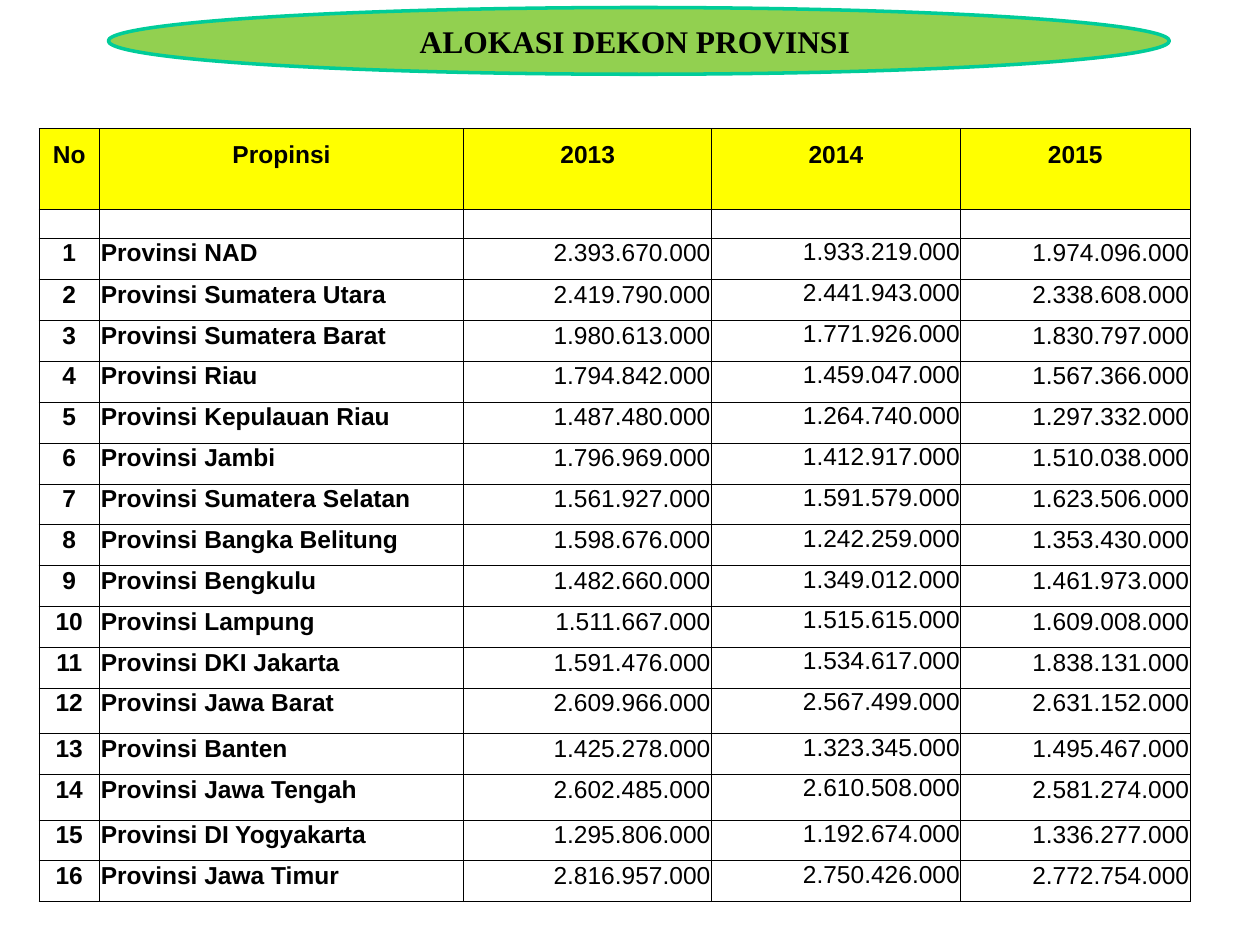
from dataclasses import dataclass

from lxml import etree
from pptx import Presentation
from pptx.dml.color import RGBColor
from pptx.enum.shapes import MSO_SHAPE
from pptx.enum.text import MSO_ANCHOR, PP_ALIGN
from pptx.oxml.ns import qn
from pptx.util import Inches, Pt


@dataclass(frozen=True)
class Theme:
    text: RGBColor = RGBColor(0, 0, 0)
    banner: RGBColor = RGBColor(0x92, 0xD0, 0x50)
    banner_line: RGBColor = RGBColor(0x00, 0xCC, 0x99)
    header: RGBColor = RGBColor(0xFF, 0xFF, 0x00)
    border: str = "000000"
    title_font: str = "Times New Roman"
    table_font: str = "Arial"
    title_size: Pt = Pt(18)
    table_size: Pt = Pt(14)
    border_width: Pt = Pt(0.5)


theme = Theme()


def write_text(frame, text, font_name, size, bold, align):
    frame.text = text
    paragraph = frame.paragraphs[0]
    paragraph.alignment = align
    for run in paragraph.runs:
        run.font.name = font_name
        run.font.size = size
        run.font.bold = bold
        run.font.color.rgb = theme.text


def set_borders(cell, hidden=()):
    properties = cell._tc.get_or_add_tcPr()
    for position, side in enumerate(("lnL", "lnR", "lnT", "lnB")):
        line = etree.Element(qn(f"a:{side}"), w=str(theme.border_width))
        if side in hidden:
            etree.SubElement(line, qn("a:noFill"))
        else:
            fill = etree.SubElement(line, qn("a:solidFill"))
            etree.SubElement(fill, qn("a:srgbClr"), val=theme.border)
        properties.insert(position, line)


HEADINGS = ("No", "Propinsi", "2013", "2014", "2015")
ALLOCATIONS = (
    ("Provinsi NAD", "2.393.670.000", "1.933.219.000", "1.974.096.000"),
    ("Provinsi Sumatera Utara", "2.419.790.000", "2.441.943.000", "2.338.608.000"),
    ("Provinsi Sumatera Barat", "1.980.613.000", "1.771.926.000", "1.830.797.000"),
    ("Provinsi Riau", "1.794.842.000", "1.459.047.000", "1.567.366.000"),
    ("Provinsi Kepulauan Riau", "1.487.480.000", "1.264.740.000", "1.297.332.000"),
    ("Provinsi Jambi", "1.796.969.000", "1.412.917.000", "1.510.038.000"),
    ("Provinsi Sumatera Selatan", "1.561.927.000", "1.591.579.000", "1.623.506.000"),
    ("Provinsi Bangka Belitung", "1.598.676.000", "1.242.259.000", "1.353.430.000"),
    ("Provinsi Bengkulu", "1.482.660.000", "1.349.012.000", "1.461.973.000"),
    ("Provinsi Lampung", "1.511.667.000", "1.515.615.000", "1.609.008.000"),
    ("Provinsi DKI Jakarta", "1.591.476.000", "1.534.617.000", "1.838.131.000"),
    ("Provinsi Jawa Barat", "2.609.966.000", "2.567.499.000", "2.631.152.000"),
    ("Provinsi Banten", "1.425.278.000", "1.323.345.000", "1.495.467.000"),
    ("Provinsi Jawa Tengah", "2.602.485.000", "2.610.508.000", "2.581.274.000"),
    ("Provinsi DI Yogyakarta", "1.295.806.000", "1.192.674.000", "1.336.277.000"),
    ("Provinsi Jawa Timur", "2.816.957.000", "2.750.426.000", "2.772.754.000"),
)

presentation = Presentation()
presentation.slide_width, presentation.slide_height = Inches(10), Inches(7.5)
slide = presentation.slides.add_slide(presentation.slide_layouts[5])

# Title on its oval banner
banner_box = Inches(0.86), Inches(0.06), Inches(8.42), Inches(0.53)
banner = slide.shapes.add_shape(MSO_SHAPE.OVAL, *banner_box)
banner.shadow.inherit = False
banner.fill.solid()
banner.fill.fore_color.rgb = theme.banner
banner.line.color.rgb = theme.banner_line
banner.line.width = Pt(2)

title = slide.shapes.title
title.left, title.top, title.width, title.height = banner_box
title.text_frame.vertical_anchor = MSO_ANCHOR.MIDDLE
write_text(title.text_frame, "ALOKASI DEKON PROVINSI ", theme.title_font,
           theme.title_size, True, PP_ALIGN.CENTER)
# The banner was added after the placeholder, so bring the title to the front
slide.shapes._spTree.append(title._element)

# Table grid: a few rows have their own height, the others share the rest
HEADER_ROWS = 2
blank = ("",) * len(HEADINGS)
rows = [HEADINGS, blank, blank]
rows += [(str(number), *row) for number, row in enumerate(ALLOCATIONS, 1)]
column_widths = (0.48, 2.89, 1.97, 1.97, 1.83)
special_heights = {0: 0.32, 1: 0.32, 2: 0.23, 3: 0.33, 14: 0.36, 16: 0.36}
table_height = 6.14
regular_height = ((table_height - sum(special_heights.values()))
                  / (len(rows) - len(special_heights)))

allocation_table = slide.shapes.add_table(
    len(rows), len(HEADINGS), Inches(0.31), Inches(1.02),
    Inches(sum(column_widths)), Inches(table_height)).table
allocation_table.first_row = False
allocation_table.horz_banding = False
for column, width in zip(allocation_table.columns, column_widths):
    column.width = Inches(width)

# Table cells
column_aligns = (PP_ALIGN.CENTER, PP_ALIGN.LEFT) + (PP_ALIGN.RIGHT,) * 3
for row_index, row in enumerate(rows):
    allocation_table.rows[row_index].height = Inches(
        special_heights.get(row_index, regular_height))
    is_header = row_index < HEADER_ROWS
    for column_index, text in enumerate(row):
        cell = allocation_table.cell(row_index, column_index)
        inset = 0 if column_index == 3 and not is_header else Inches(0.01)
        cell.margin_left = cell.margin_right = cell.margin_top = inset
        cell.margin_bottom = 0
        cell.vertical_anchor = MSO_ANCHOR.BOTTOM if is_header else MSO_ANCHOR.TOP
        if text:
            write_text(cell.text_frame, text, theme.table_font, theme.table_size,
                       is_header or column_index < 2,
                       PP_ALIGN.CENTER if is_header else column_aligns[column_index])
        else:
            # Keeps the empty row from growing to the default type size
            etree.SubElement(cell.text_frame.paragraphs[0]._p, qn("a:endParaRPr"),
                             sz=str(int(theme.table_size.pt - 2) * 100))
        if is_header:
            cell.fill.solid()
            cell.fill.fore_color.rgb = theme.header
        else:
            cell.fill.background()
        set_borders(cell, {0: ("lnB",), 1: ("lnT",)}.get(row_index, ()))

presentation.save("out.pptx")
